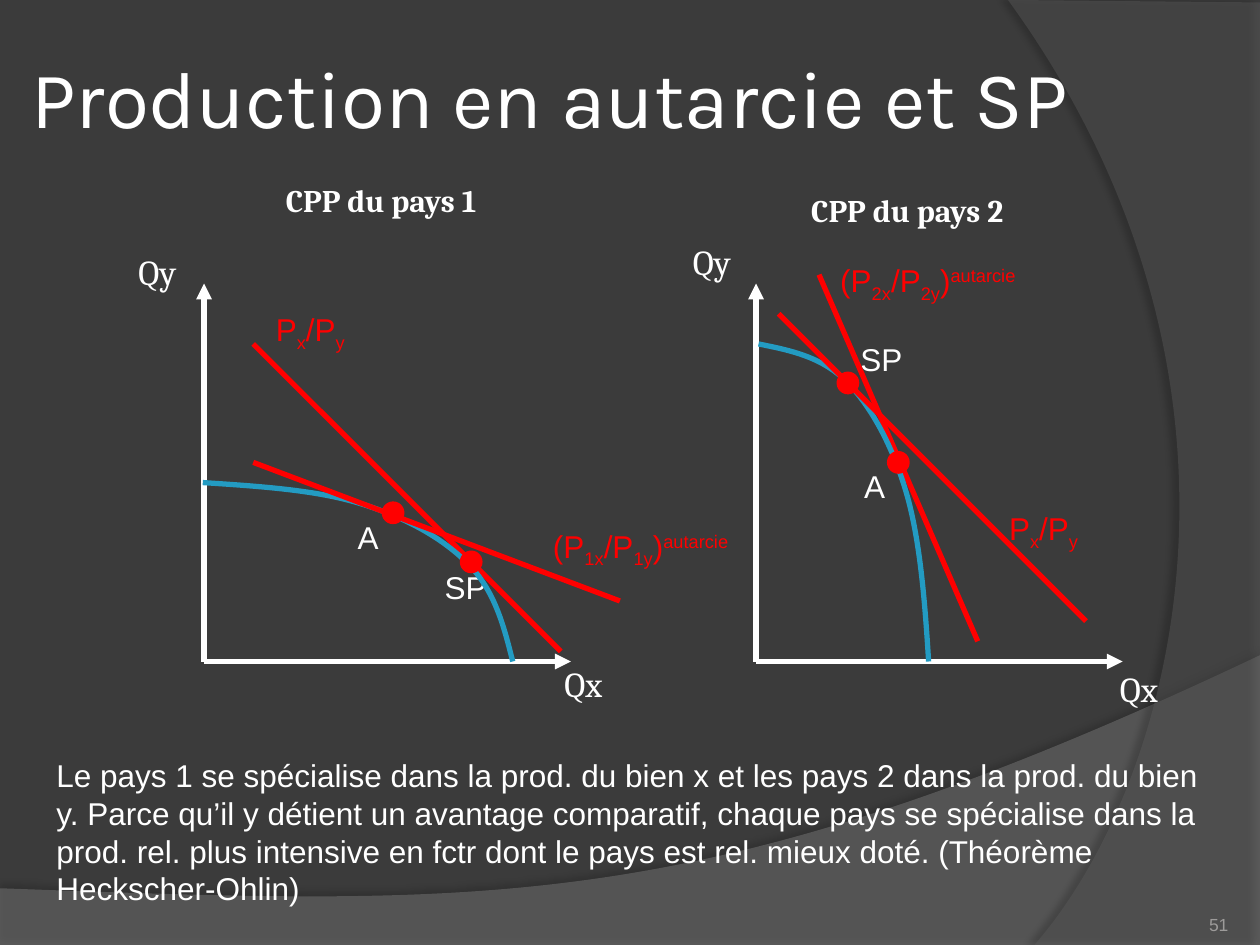
from lxml import etree
from pptx import Presentation, util as u
from pptx.dml.color import RGBColor
from pptx.enum import shapes, text
from pptx.oxml import ns

WHITE, RED, BLUE = "FFFFFF", "FF0000", "239BC2"
WIDTH, HEIGHT = 10, 7.5
AXIS_BOTTOM, AXIS_TOP, AXIS_LENGTH = 5.25, 2.25, 2.91
DOT = 0.16
SUB, SUPER = -25, 30

TITLE = "Production en autarcie et SP"
CONCLUSION = (
    "Le pays 1 se spécialise dans la prod. du bien x et les pays 2 dans la prod. du bien y. "
    "Parce qu’il y détient un avantage comparatif, chaque pays se spécialise dans la prod. rel. "
    "plus intensive en fctr dont le pays est rel. mieux doté. (Théorème Heckscher-Ohlin)"
)
WORLD_PRICE = [("P", 0), ("x", SUB), ("/P", 0), ("y", SUB)]


def autarky_price(country):
    return [("(P", 0), (f"{country}x", SUB), ("/P", 0), (f"{country}y", SUB),
            (")", 0), ("autarcie", SUPER)]


# An outline is a start point, then segments: one point for a line, three for a cubic curve.
WAVE = [(0, 7.05), [(0, 7.51)], [(WIDTH, 7.51)], [(WIDTH, 5.2)],
        [(5.59, 7.29), (3.91, 7.19), (0, 7.05)]]
ARC = [(WIDTH, 0.02), [(WIDTH, HEIGHT)], [(8.21, HEIGHT)],
       [(9.35, 6.19), (10.18, 3), (8, 0)], [(WIDTH, 0.02)]]

# Price lines are listed back to front; the frontier lies between the two.
COUNTRIES = [
    dict(
        origin=1.62, name=("CPP du pays 1", 2.17, 1.39), qx=(4.38, 5.21), qy=(1, 1.94),
        frontier=[(1.61, 3.83), [(2.07, 3.86), (2.52, 3.89), (2.87, 4)],
                  [(3.23, 4.11), (3.53, 4.28), (3.73, 4.49)],
                  [(3.93, 4.7), (4, 4.97), (4.07, 5.25)]],
        price_lines=[((2.01, 2.73), (4.45, 5.17)), ((2.01, 3.67), (4.92, 4.77))],
        prices=[(WORLD_PRICE, 2.09, 2.41, 1.18), (autarky_price(1), 4.29, 4.13, 2.05)],
        points=[("A", (3.12, 4.07), (2.74, 4.06), 0.37),
                ("SP", (3.74, 4.46), (3.43, 4.46), 0.54)],
    ),
    dict(
        origin=6, name=("CPP du pays 2", 6.34, 1.47), qx=(8.79, 5.25), qy=(5.4, 1.86),
        frontier=[(6.02, 2.73), [(6.27, 2.78), (6.52, 2.83), (6.72, 3.03)],
                  [(6.91, 3.22), (7.08, 3.53), (7.19, 3.9)],
                  [(7.3, 4.27), (7.34, 4.76), (7.37, 5.25)]],
        price_lines=[((6.5, 2.18), (7.76, 5.09)), ((6.18, 2.49), (8.62, 4.93))],
        prices=[(WORLD_PRICE, 7.91, 3.99, 1.18), (autarky_price(2), 6.57, 2.02, 2.05)],
        points=[("A", (7.13, 3.67), (6.76, 3.66), 0.37),
                ("SP", (6.73, 3.04), (6.73, 2.65), 0.54)],
    ),
]


def rgb(code):
    return RGBColor.from_string(code)


def add_xml(parent, tag, **attributes):
    return etree.SubElement(parent, ns.qn(tag), attributes)


def add_outline(slide, outline, close):
    """Draw straight segments between the anchors, then bend those that are curves."""
    start, *segments = outline
    builder = slide.shapes.build_freeform(*map(u.Inches, start))
    builder.add_line_segments([tuple(map(u.Inches, s[-1])) for s in segments], close=close)
    shape = builder.convert_to_shape()
    shape.shadow.inherit = False
    sides = list(shape._element.spPr.iter(ns.qn("a:lnTo")))
    for side, segment in zip(sides, segments):
        if len(segment) == 3:
            curve = etree.Element(ns.qn("a:cubicBezTo"))
            for x, y in segment:
                add_xml(curve, "a:pt", x=str(u.Inches(x) - shape.left),
                        y=str(u.Inches(y) - shape.top))
            side.getparent().replace(side, curve)
    return shape


def add_backdrop(slide, outline, color, opacity, shadow_opacity, distance, direction):
    band = add_outline(slide, outline, True)
    band.fill.solid()
    band.fill.fore_color.rgb = rgb(color)
    band.line.fill.background()
    properties = band._element.spPr
    tint = properties.find(ns.qn("a:solidFill")).find(ns.qn("a:srgbClr"))
    add_xml(tint, "a:alpha", val=str(opacity * 1000))
    shadow = add_xml(properties.find(ns.qn("a:effectLst")), "a:outerShdw",
                     blurRad=str(u.Pt(4)), dist=str(u.Pt(distance)),
                     dir=str(direction * 60000), algn="ctr", rotWithShape="0")
    shade = add_xml(shadow, "a:srgbClr", val="000000")
    add_xml(shade, "a:alpha", val=str(shadow_opacity * 1000))


def add_text(slide, content, left, top, width, height=0.4, size=18, font="Arial", color=WHITE,
             bold=False, wrap=False, grow=True):
    """Add a text box; content is a string or a list of (text, baseline shift)."""
    box = slide.shapes.add_textbox(*map(u.Inches, (left, top, width, height)))
    frame = box.text_frame
    frame.word_wrap = wrap
    frame.auto_size = text.MSO_AUTO_SIZE.SHAPE_TO_FIT_TEXT if grow else text.MSO_AUTO_SIZE.NONE
    paragraph = frame.paragraphs[0]
    paragraph.font.size, paragraph.font.name, paragraph.font.bold = u.Pt(size), font, bold
    paragraph.font.color.rgb = rgb(color)
    for words, shift in [(content, 0)] if isinstance(content, str) else content:
        run = paragraph.add_run()
        run.text = words
        if shift:
            run.font._element.set("baseline", str(shift * 1000))
    return frame


def add_line(slide, start, end, color, arrow=False):
    line = slide.shapes.add_connector(shapes.MSO_CONNECTOR.STRAIGHT,
                                      *map(u.Inches, (*start, *end)))
    line.line.color.rgb = rgb(color)
    line.line.width = u.Pt(3)
    if arrow:
        add_xml(line.line._get_or_add_ln(), "a:tailEnd", type="triangle")
    add_xml(line._element.spPr, "a:effectLst")


def add_frontier(slide, outline):
    frontier = add_outline(slide, outline, False)
    frontier.fill.background()
    frontier.line.color.rgb = rgb(BLUE)
    frontier.line.width = u.Pt(3)


def add_dot(slide, x, y):
    dot = slide.shapes.add_shape(shapes.MSO_SHAPE.OVAL,
                                 *map(u.Inches, (x - DOT / 2, y - DOT / 2, DOT, DOT)))
    dot.shadow.inherit = False
    dot.fill.solid()
    dot.fill.fore_color.rgb = dot.line.color.rgb = rgb(RED)
    dot.line.width = u.Pt(1.5)


def add_country(slide, country):
    origin = (country["origin"], AXIS_BOTTOM)
    add_line(slide, origin, (origin[0] + AXIS_LENGTH, AXIS_BOTTOM), WHITE, arrow=True)
    add_line(slide, origin, (origin[0], AXIS_TOP), WHITE, arrow=True)
    add_text(slide, *country["name"], 1.77, font="Cambria", bold=True)
    for label, key in (("Qx", "qx"), ("Qy", "qy")):
        add_text(slide, label, *country[key], 0.55, 0.44, size=20, font="Cambria")
    for price in country["prices"]:
        add_text(slide, *price, color=RED, wrap=True)
    for label, _, corner, width in country["points"]:
        add_text(slide, label, *corner, width)
    back, front = country["price_lines"]
    add_line(slide, *back, RED)
    add_frontier(slide, country["frontier"])
    add_line(slide, *front, RED)
    for _, center, _, _ in country["points"]:
        add_dot(slide, *center)


def main():
    deck = Presentation()
    deck.slide_width, deck.slide_height = u.Inches(WIDTH), u.Inches(HEIGHT)
    slide = deck.slides.add_slide(deck.slide_layouts[6])
    slide.background.fill.solid()
    slide.background.fill.fore_color.rgb = rgb("3B3B3B")
    add_backdrop(slide, WAVE, "7F7F7F", 45, 35, 3.5, 270)
    add_backdrop(slide, ARC, "5E5E5E", 40, 45, 4, 180)

    title = add_text(slide, TITLE, 0.2, 0.14, 9.5, 1.25, size=46, font="Karla",
                     wrap=True, grow=False)
    title.vertical_anchor = text.MSO_ANCHOR.MIDDLE
    title.margin_left = title.margin_right = u.Inches(0.05)
    for country in COUNTRIES:
        add_country(slide, country)
    add_text(slide, CONCLUSION, 0.35, 5.95, 9.37, 1.62, wrap=True)

    number = add_text(slide, "51", 8.92, 7.02, 0.83, size=10, color="9D9B9A",
                      wrap=True, grow=False)
    number.vertical_anchor = text.MSO_ANCHOR.BOTTOM
    number.margin_left = number.margin_right = number.margin_top = number.margin_bottom = 0
    number.paragraphs[0].alignment = text.PP_ALIGN.RIGHT

    deck.save("out.pptx")


if __name__ == "__main__":
    main()
